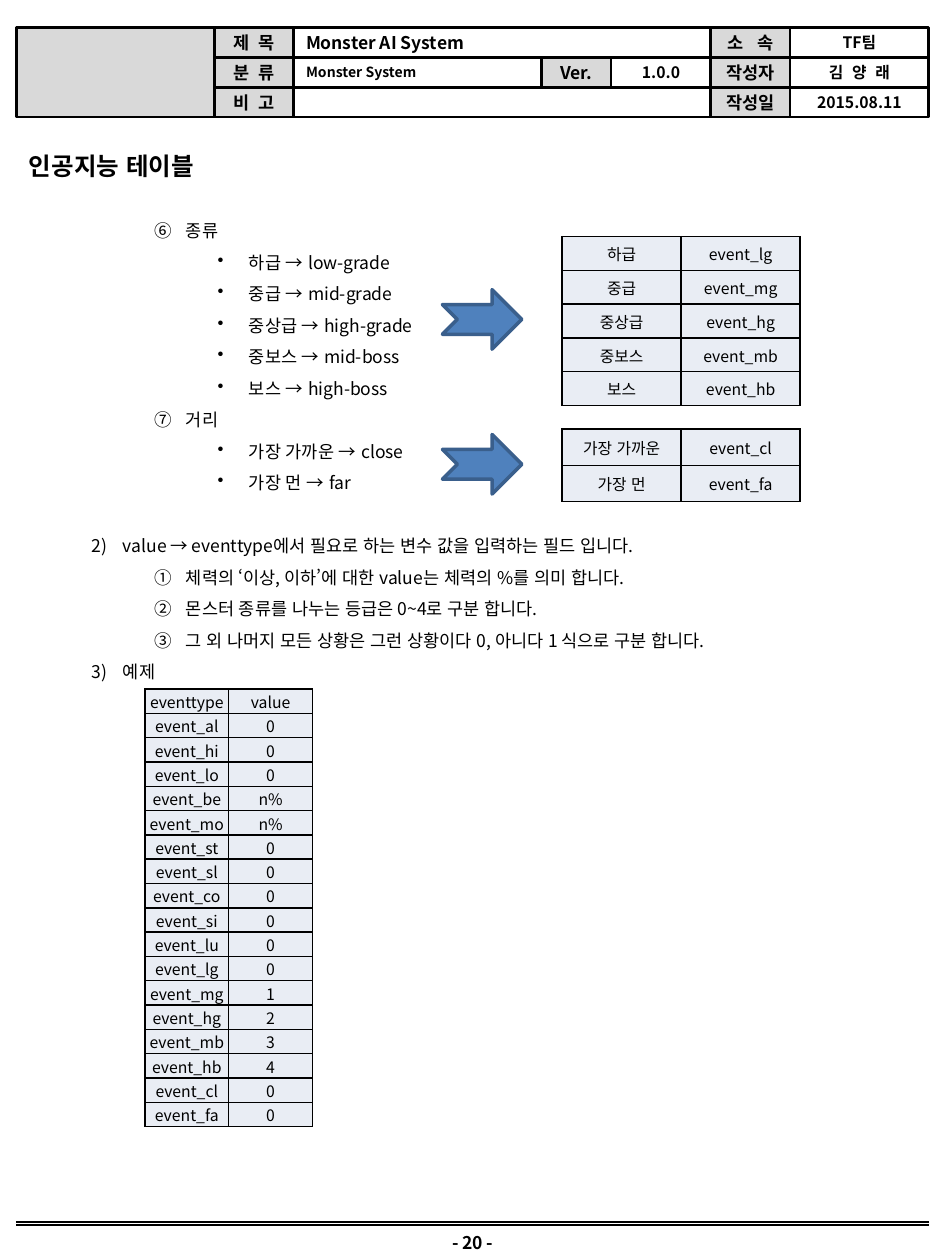
import pptx
import pptx.util
import pptx.dml.color
import pptx.enum.lang
import pptx.enum.shapes
import pptx.enum.text
import pptx.oxml.ns
import lxml.etree

Cm = pptx.util.Cm
Pt = pptx.util.Pt
RGBColor = pptx.dml.color.RGBColor
qn = pptx.oxml.ns.qn
Shape = pptx.enum.shapes.MSO_SHAPE
Align = pptx.enum.text.PP_ALIGN
MIDDLE = pptx.enum.text.MSO_ANCHOR.MIDDLE
KOREAN = pptx.enum.lang.MSO_LANGUAGE_ID.KOREAN

BLACK = RGBColor(0x00, 0x00, 0x00)
GRAY = RGBColor(0xD9, 0xD9, 0xD9)
PALE = RGBColor(0xE9, 0xED, 0xF4)
BLUE = RGBColor(0x4F, 0x81, 0xBD)
NAVY = RGBColor(0x3A, 0x5F, 0x8C)
FONT = "Noto Sans CJK KR"


def style(para, size, bold=False, align=Align.CENTER):
    para.alignment = align
    font = para.font
    font.size, font.bold, font.name = Pt(size), bold, FONT
    font.color.rgb = BLACK
    font.language_id = KOREAN
    for run in para.runs:
        run.font.language_id = KOREAN
    props = para._p.pPr.find(qn("a:defRPr"))
    props.find(qn("a:latin")).addnext(
        props.makeelement(qn("a:ea"), {"typeface": FONT}))


def grid(rows, left, top, width, height):
    """Add a bordered two-column table; height is that of one row."""
    frame = slide.shapes.add_table(len(rows), 2, Cm(left), Cm(top),
                                   Cm(2 * width), Cm(height * len(rows)))
    table = frame.table
    table.first_row = table.horz_banding = False
    for col in table.columns:
        col.width = Cm(width)
    for r, row in enumerate(rows):
        table.rows[r].height = Cm(height)
        for c, text in enumerate(row):
            cell = table.cell(r, c)
            cell.text = text
            cell.vertical_anchor = MIDDLE
            cell.margin_left = cell.margin_right = cell.margin_top = Cm(0.02)
            cell.margin_bottom = 0
            cell.fill.solid()
            cell.fill.fore_color.rgb = PALE
            style(cell.text_frame.paragraphs[0], 9)
            props = cell._tc.get_or_add_tcPr()
            for i, side in enumerate(("lnL", "lnR", "lnT", "lnB")):
                line = props.makeelement(qn("a:" + side), {"w": str(Pt(1))})
                fill = lxml.etree.SubElement(line, qn("a:solidFill"))
                lxml.etree.SubElement(fill, qn("a:srgbClr"), val=str(BLACK))
                props.insert(i, line)


deck = pptx.Presentation()
deck.slide_width, deck.slide_height = Cm(19.05), Cm(25.4)
slide = deck.slides.add_slide(deck.slide_layouts[5])

# Header form: left, right, first row, row span, text, size, filled
HEAD = [
    (0.33, 4.32, 0, 3, "", 10, True),
    (15.93, 18.72, 2, 1, "2015.08.11", 9, False),
    (15.93, 18.72, 0, 1, "TF팀", 9, False),
    (15.93, 18.72, 1, 1, "김  양  래", 9, False),
    (14.33, 15.93, 2, 1, "작성일", 10, True),
    (14.33, 15.93, 0, 1, "소   속", 10, True),
    (14.33, 15.93, 1, 1, "작성자", 10, True),
    (5.92, 14.33, 2, 1, "", 10, False),
    (5.92, 14.33, 0, 1, "Monster AI System", 10, False),
    (12.32, 14.33, 1, 1, "1.0.0", 9, False),
    (4.32, 5.92, 0, 1, "제  목", 10, True),
    (10.92, 12.32, 1, 1, "Ver.", 10, True),
    (4.32, 5.92, 1, 1, "분  류", 10, True),
    (4.32, 5.92, 2, 1, "비  고", 10, True),
    (5.92, 10.92, 1, 1, "Monster System", 8, False),
]
for left, right, row, span, text, size, filled in HEAD:
    box = slide.shapes.add_shape(Shape.RECTANGLE, Cm(left), Cm(0.56 + 0.6 * row),
                                 Cm(right - left), Cm(0.6 * span))
    box.shadow.inherit = False
    box.line.color.rgb, box.line.width = BLACK, Pt(1.5)
    if filled:
        box.fill.solid()
        box.fill.fore_color.rgb = GRAY
    else:
        box.fill.background()
    if text:
        frame = box.text_frame
        frame.text = text
        frame.vertical_anchor = MIDDLE
        frame.margin_top = frame.margin_bottom = 0
        side = Align.LEFT if text.startswith("Monster") else Align.CENTER
        style(frame.paragraphs[0], size, True, side)

# Footer rule and page number
for y in (24.63, 24.69):
    rule = slide.shapes.add_connector(pptx.enum.shapes.MSO_CONNECTOR.STRAIGHT,
                                      Cm(0.33), Cm(y), Cm(18.72), Cm(y))
    rule.line.color.rgb, rule.line.width = BLACK, Pt(1)
    lxml.etree.SubElement(rule._element.spPr, qn("a:effectLst"))

page = slide.shapes.add_textbox(Cm(8.53), Cm(24.69), Cm(2), Cm(0.71)).text_frame
page.word_wrap = True
page.vertical_anchor = MIDDLE
page.text = "- 20 -"
style(page.paragraphs[0], 10, True)

# Title
title = slide.shapes.title
title.left, title.top, title.width, title.height = Cm(0.33), Cm(2.69), Cm(18.39), Cm(0.99)
title.text_frame.text = "인공지능 테이블"
title.text_frame.auto_size = pptx.enum.text.MSO_AUTO_SIZE.NONE
title.text_frame.vertical_anchor = MIDDLE
title.text_frame.paragraphs[0].line_spacing = 1.5
style(title.text_frame.paragraphs[0], 14, True, Align.LEFT)

# Outline: level, first number, text
ITEMS = [
    (2, 6, "종류"),
    (3, 0, "하급 → low-grade"),
    (3, 0, "중급 → mid-grade"),
    (3, 0, "중상급 → high-grade"),
    (3, 0, "중보스 → mid-boss"),
    (3, 0, "보스 → high-boss"),
    (2, 6, "거리"),
    (3, 0, "가장 가까운 → close"),
    (3, 0, "가장 먼 → far"),
    (1, 2, "value → eventtype에서 필요로 하는 변수 값을 입력하는 필드 입니다."),
    (2, 1, "체력의 ‘이상, 이하’에 대한 value는 체력의 %를 의미 합니다."),
    (2, 1, "몬스터 종류를 나누는 등급은 0~4로 구분 합니다."),
    (2, 1, "그 외 나머지 모든 상황은 그런 상황이다 0, 아니다 1 식으로 구분 합니다."),
    (1, 2, "예제"),
]
MARKS = {1: "arabicParenR", 2: "circleNumDbPlain"}
body = slide.shapes.add_textbox(Cm(0.33), Cm(4.1), Cm(18.39), Cm(20.19)).text_frame
body.word_wrap = True
for i, (level, start, text) in enumerate(ITEMS):
    para = body.add_paragraph() if i else body.paragraphs[0]
    para.text = text
    para.level = level
    para.line_spacing = Pt(18)
    if text.startswith("value"):
        para.space_before = Pt(18)
    props = para._p.get_or_add_pPr()
    props.set("marL", str(Cm(0.63 + 1.27 * level)))
    props.set("indent", str(-Cm(0.63)))
    if level == 3:
        lxml.etree.SubElement(props, qn("a:buChar"), char="•")
    else:
        mark = lxml.etree.SubElement(props, qn("a:buAutoNum"), type=MARKS[level])
        if start > 1:
            mark.set("startAt", str(start))
    style(para, 10, False, Align.LEFT)

# Event names by grade and by distance
grades = ["event_lg", "event_mg", "event_hg", "event_mb", "event_hb"]
grid(list(zip(["하급", "중급", "중상급", "중보스", "보스"], grades)), 11.33, 4.77, 2.4, 0.68)
grid([("가장 가까운", "event_cl"), ("가장 먼", "event_fa")], 11.33, 8.65, 2.4, 0.73)
for top in (5.84, 8.76):
    arrow = slide.shapes.add_shape(Shape.NOTCHED_RIGHT_ARROW, Cm(8.92), Cm(top),
                                   Cm(1.6), Cm(1.2))
    arrow.shadow.inherit = False
    arrow.fill.solid()
    arrow.fill.fore_color.rgb = BLUE
    arrow.line.color.rgb, arrow.line.width = NAVY, Pt(2)

# Example values
values = {"be": "n%", "mo": "n%", "mg": "1", "hg": "2", "mb": "3", "hb": "4"}
codes = "al hi lo be mo st sl co si lu lg mg hg mb hb cl fa".split()
rows = [("event_" + code, values.get(code, "0")) for code in codes]
grid([("eventtype", "value")] + rows, 2.92, 13.89, 1.69, 0.49)

deck.save("out.pptx")
